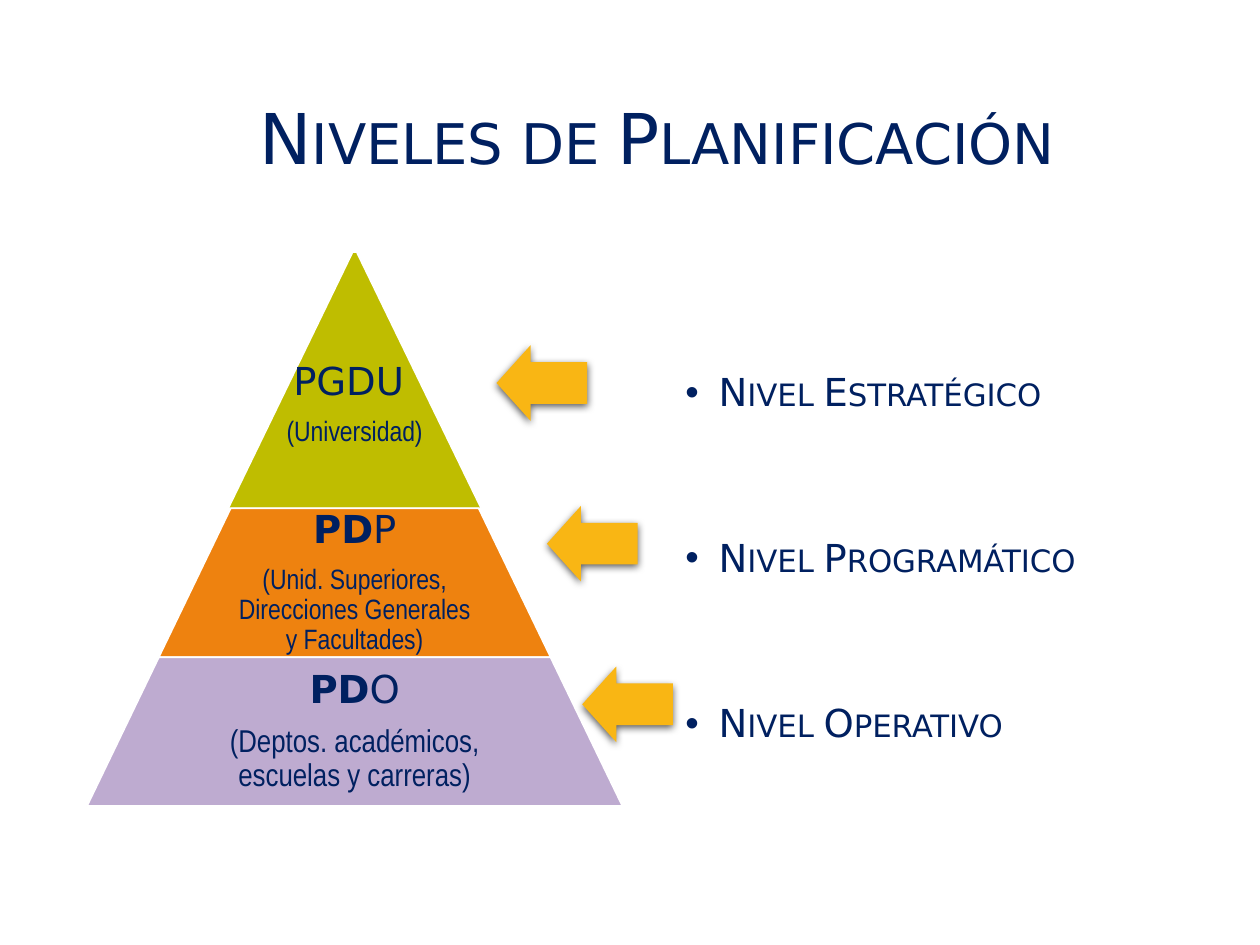
import dataclasses
import pptx
import pptx.util
import pptx.dml.color
import pptx.enum.shapes
import pptx.enum.text
import pptx.oxml
import pptx.oxml.ns

Pt = pptx.util.Pt
Shape = pptx.enum.shapes.MSO_SHAPE
Align = pptx.enum.text.PP_ALIGN
Anchor = pptx.enum.text.MSO_ANCHOR
Fit = pptx.enum.text.MSO_AUTO_SIZE


@dataclasses.dataclass(frozen=True)
class Theme:
    ink: str = "002060"
    edge: str = "FFFFFF"
    lime: str = "BFBD00"
    orange: str = "EE820F"
    lilac: str = "BEABD0"
    arrow: str = "F9B614"
    face: str = "DejaVu Sans"
    narrow: str = "Arial Narrow"
    title: int = 40
    head: int = 22
    note: int = 16
    large: int = 18


THEME = Theme()
AXIS = 202.7


def color(code):
    return pptx.dml.color.RGBColor.from_string(code)


def apply(item, values):
    for name, value in values.items():
        setattr(item, name, value)


def place(shape, left, top, width, height):
    apply(shape, dict(left=Pt(left), top=Pt(top),
                      width=Pt(width), height=Pt(height)))


def xml(tag, inner="", **attrs):
    space = pptx.oxml.ns.nsdecls("a")
    text = " ".join(f'{key}="{value}"' for key, value in attrs.items())
    return pptx.oxml.parse_xml(f"<a:{tag} {space} {text}>{inner}</a:{tag}>")


def write(para, text, size, face=THEME.face, bold=False, caps=False):
    run = para.add_run()
    run.text = text
    apply(run.font, dict(size=Pt(size), name=face, bold=bold))
    run.font.color.rgb = color(THEME.ink)
    if caps:
        run.font._element.set("cap", "small")


def add_title(slide, text):
    title = slide.shapes.title
    place(title, 127.4, 28.8, 496, 104.4)
    frame = title.text_frame
    apply(frame, dict(word_wrap=True, auto_size=Fit.NONE,
                      vertical_anchor=Anchor.MIDDLE))
    para = frame.paragraphs[0]
    apply(para, dict(alignment=Align.CENTER, line_spacing=0.9))
    write(para, text, THEME.title, caps=True)


def add_list(slide, items):
    body = slide.placeholders[1]
    place(body, 384.5, 144, 286.5, 342.7)
    frame = body.text_frame
    apply(frame, dict(word_wrap=True, auto_size=Fit.NONE,
                      margin_top=Pt(69.5), vertical_anchor=Anchor.TOP))
    for index, text in enumerate(items):
        para = frame.add_paragraph() if index else frame.paragraphs[0]
        props = para._p.get_or_add_pPr()
        props.set("marL", str(Pt(19)))
        props.set("indent", str(-Pt(19)))
        props.append(xml("buFont", typeface="Arial"))
        props.append(xml("buChar", char="•"))
        apply(para, dict(line_spacing=0.9, space_after=Pt(0),
                         space_before=Pt(70.7 if index else 0)))
        write(para, text, THEME.head, caps=True)


def add_tier(group, top, height, base, ratio, fill):
    tier = group.shapes.add_shape(
        Shape.TRAPEZOID, Pt(AXIS - base / 2), Pt(top), Pt(base), Pt(height))
    tier.adjustments[0] = ratio
    tier.shadow.inherit = False
    tier.fill.solid()
    tier.fill.fore_color.rgb = color(fill)
    tier.line.color.rgb = color(THEME.edge)
    tier.line.width = Pt(1)


def add_label(group, top, height, width, strong, plain, note, size, drop):
    box = group.shapes.add_textbox(
        Pt(AXIS - width / 2), Pt(top), Pt(width), Pt(height))
    frame = box.text_frame
    apply(frame, dict(word_wrap=True, vertical_anchor=Anchor.MIDDLE,
                      margin_left=Pt(2), margin_right=Pt(2),
                      margin_top=Pt(2 + drop), margin_bottom=Pt(2)))
    head, foot = frame.paragraphs[0], frame.add_paragraph()
    for para, scale in ((head, THEME.head), (foot, size)):
        apply(para, dict(alignment=Align.CENTER, line_spacing=0.9,
                         space_after=Pt(0.35 * scale)))
    if strong:
        write(head, strong, THEME.head, bold=True)
    write(head, plain, THEME.head)
    write(foot, note, size, THEME.narrow)


def add_arrow(slide, left, top):
    arrow = slide.shapes.add_shape(
        Shape.DOWN_ARROW, Pt(left), Pt(top), Pt(43.2), Pt(51.8))
    arrow.rotation = 90
    arrow.adjustments[0] = 0.55
    arrow.adjustments[1] = 0.45
    arrow.fill.solid()
    arrow.fill.fore_color.rgb = color(THEME.arrow)
    arrow.line.fill.background()
    shade = (f'<a:outerShdw blurRad="{Pt(4.5)}" dist="{Pt(1.5)}" '
             'dir="5400000" rotWithShape="0"><a:srgbClr val="000000">'
             '<a:alpha val="63000"/></a:srgbClr></a:outerShdw>')
    arrow._element.spPr.append(xml("effectLst", shade))


def main():
    deck = pptx.Presentation()
    apply(deck, dict(slide_width=Pt(720), slide_height=Pt(540)))
    slide = deck.slides.add_slide(deck.slide_layouts[1])
    add_title(slide, "Niveles de Planificación")
    add_list(slide, ["Nivel Estratégico", "Nivel Programático",
                     "Nivel Operativo"])
    group = slide.shapes.add_group_shape()
    tiers = (
        (144, 146.6, 144.7, 0.492, THEME.lime, 144.7, "", "PGDU ",
         "(Universidad)", THEME.note, 28),
        (290.5, 85, 223.9, 0.483, THEME.orange, 145.4, "PD", "P",
         "(Unid. Superiores, Direcciones Generales y Facultades)",
         THEME.note, 0),
        (375.6, 85, 306, 0.483, THEME.lilac, 198.7, "PD", "O",
         "(Deptos. académicos, escuelas y carreras)", THEME.large, 0),
    )
    for top, height, base, ratio, fill, width, *label in tiers:
        add_tier(group, top, height, base, ratio, fill)
        add_label(group, top, height, width, *label)
    for index, left in enumerate((288, 316.8, 337)):
        add_arrow(slide, left, 193 + 91.8 * index)
    deck.save("out.pptx")


if __name__ == "__main__":
    main()
